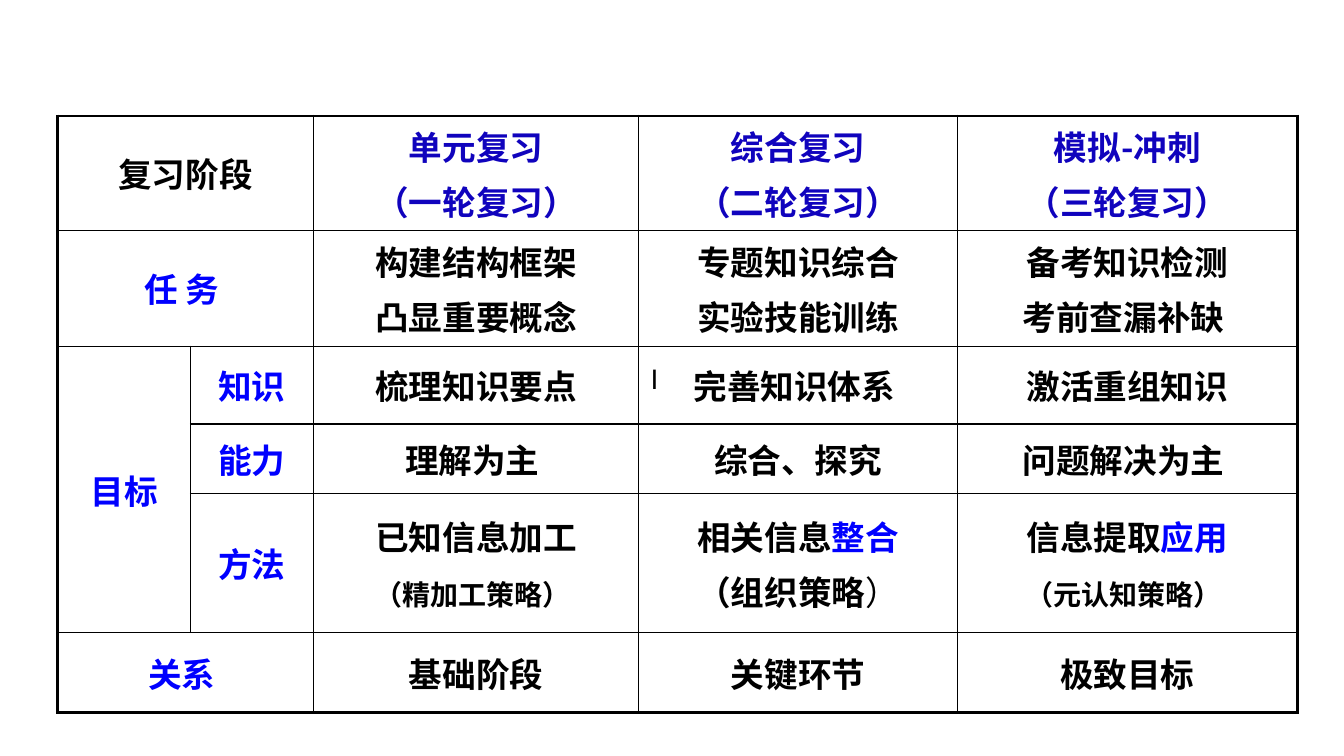
from typing import NamedTuple

import lxml.etree
import pptx
import pptx.dml.color
import pptx.enum.text
import pptx.oxml.ns
import pptx.util

Cm = pptx.util.Cm
Pt = pptx.util.Pt
RGBColor = pptx.dml.color.RGBColor

BLACK = RGBColor(0x00, 0x00, 0x00)
BLUE = RGBColor(0x00, 0x00, 0xFF)
NAVY = RGBColor(0x10, 0x03, 0xBD)
FONT = "Noto Sans CJK SC"
PLAIN = "{2D5ABB26-0587-4C30-8999-92F81FD0307C}"
SIZE = 24
THIN, THICK = 1, 2.25
WIDTHS = (3.35, 3.1, 8.2, 8.03, 8.56)
HEIGHTS = (2.49, 2.92, 1.96, 1.75, 3.51, 2.01)


class Entry(NamedTuple):
    row: int
    col: int
    text: str
    color: RGBColor = BLACK
    down: int = 1
    across: int = 1
    accent: str = ""
    light: str = ""
    small: int = SIZE


ENTRIES = (
    Entry(0, 0, "复习阶段", across=2),
    Entry(0, 2, "单元复习\n（一轮复习）", NAVY),
    Entry(0, 3, "综合复习\n（二轮复习）", NAVY),
    Entry(0, 4, "模拟-冲刺\n（三轮复习）", NAVY),
    Entry(1, 0, "任 务 ", BLUE, across=2),
    Entry(1, 2, "构建结构框架\n凸显重要概念"),
    Entry(1, 3, "专题知识综合\n实验技能训练"),
    Entry(1, 4, "备考知识检测\n考前查漏补缺 "),
    Entry(2, 0, "目标", BLUE, down=3),
    Entry(2, 1, "知识", BLUE),
    Entry(2, 2, "梳理知识要点"),
    Entry(2, 3, "完善知识体系 "),
    Entry(2, 4, "激活重组知识"),
    Entry(3, 1, "能力", BLUE),
    Entry(3, 2, "理解为主 "),
    Entry(3, 3, "综合、探究"),
    Entry(3, 4, "问题解决为主 "),
    Entry(4, 1, "方法", BLUE),
    Entry(4, 2, "已知信息加工\n（精加工策略）", light=" ", small=20),
    Entry(4, 3, "相关信息\n（组织策略", accent="整合", light="）"),
    Entry(4, 4, "信息提取\n（元认知策略）", accent="应用", light=" ", small=20),
    Entry(5, 0, "关系 ", BLUE, across=2),
    Entry(5, 2, "基础阶段"),
    Entry(5, 3, "关键环节"),
    Entry(5, 4, "极致目标"),
)


def add_node(parent, tag: str, **attrs: str):
    return lxml.etree.SubElement(parent, pptx.oxml.ns.qn(tag), **attrs)


def style_run(run, color: RGBColor, size: float, bold: bool, face: str = FONT) -> None:
    run.font.size = Pt(size)
    run.font.bold = bold
    run.font.color.rgb = color
    run.font.name = face
    add_node(run.font._element, "a:ea", typeface=face)


def add_tail(para, text: str, color: RGBColor, bold: bool) -> None:
    if text:
        run = para.add_run()
        run.text = text
        style_run(run, color, SIZE, bold)


def fill_text(frame, entry: Entry) -> None:
    frame.text = entry.text
    for index, para in enumerate(frame.paragraphs):
        para.alignment = pptx.enum.text.PP_ALIGN.CENTER
        if index:
            para.space_before = Pt(4.8)
        size = entry.small if index else SIZE
        style_run(para.runs[0], entry.color, size, True)
    add_tail(frame.paragraphs[0], entry.accent, BLUE, True)
    add_tail(frame.paragraphs[-1], entry.light, BLACK, False)


def draw_edges(cell, entry: Entry) -> None:
    outer = {
        "a:lnL": entry.col == 0,
        "a:lnR": entry.col + entry.across == len(WIDTHS),
        "a:lnT": entry.row == 0,
        "a:lnB": entry.row + entry.down == len(HEIGHTS),
    }
    props = cell._tc.get_or_add_tcPr()
    for tag, edge in outer.items():
        line = add_node(props, tag, w=str(Pt(THICK if edge else THIN)))
        add_node(add_node(line, "a:solidFill"), "a:srgbClr", val=str(BLACK))


def draw_entry(table, entry: Entry) -> None:
    cell = table.cell(entry.row, entry.col)
    if entry.down > 1 or entry.across > 1:
        cell.merge(table.cell(entry.row + entry.down - 1, entry.col + entry.across - 1))
    cell.vertical_anchor = pptx.enum.text.MSO_ANCHOR.MIDDLE
    cell.margin_left = cell.margin_right = Cm(0.33)
    cell.margin_top = cell.margin_bottom = Cm(0.13)
    fill_text(cell.text_frame, entry)
    draw_edges(cell, entry)


def add_grid(slide) -> None:
    frame = slide.shapes.add_table(
        len(HEIGHTS), len(WIDTHS), Cm(1.45), Cm(2.92), Cm(sum(WIDTHS)), Cm(sum(HEIGHTS))
    )
    table = frame.table
    table.first_row = table.horz_banding = False
    table._tbl.tblPr.find(pptx.oxml.ns.qn("a:tableStyleId")).text = PLAIN
    for column, width in zip(table.columns, WIDTHS):
        column.width = Cm(width)
    for row, height in zip(table.rows, HEIGHTS):
        row.height = Cm(height)
    for entry in ENTRIES:
        draw_entry(table, entry)
    for cell in table.iter_cells():
        cell.fill.background()


def add_mark(slide) -> None:
    box = slide.shapes.add_textbox(Cm(16.15), Cm(9.02), Cm(1.19), Cm(1.07))
    frame = box.text_frame
    frame.word_wrap = False
    frame.auto_size = pptx.enum.text.MSO_AUTO_SIZE.SHAPE_TO_FIT_TEXT
    frame.text = "Ⅰ"
    style_run(frame.paragraphs[0].runs[0], BLACK, 19, False, "Calibri")


def main() -> None:
    deck = pptx.Presentation()
    deck.slide_width = Cm(33.87)
    deck.slide_height = Cm(19.05)
    slide = deck.slides.add_slide(deck.slide_layouts[6])
    add_grid(slide)
    add_mark(slide)
    deck.save("out.pptx")


if __name__ == "__main__":
    main()
